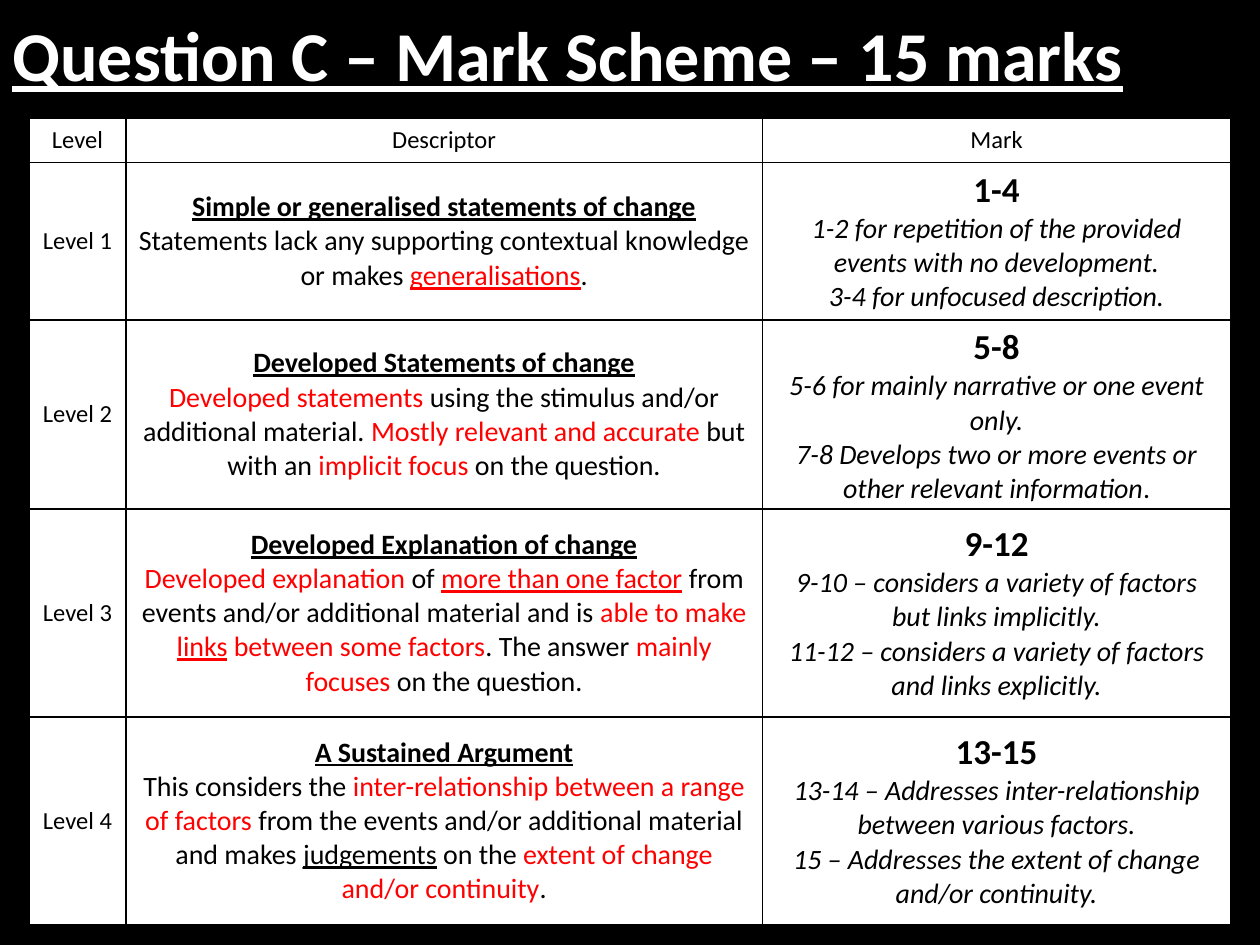
from lxml import etree
from pptx import Presentation, util as u
from pptx.dml.color import RGBColor
from pptx.enum import text
from pptx.oxml import ns

BLACK, WHITE, RED = "000000", "FFFFFF", "FF0000"
HEADINGS = ["Level", "Descriptor", "Mark"]
COLUMN_WIDTHS = [0.77, 5.05, 3.72]
ROW_HEIGHTS = [0.35, 1.25, 1.48, 1.65, 1.65]

LEVELS = [
    ("Simple or generalised statements of change",
     [("Statements lack any supporting contextual knowledge or makes ", ""),
      ("generalisations", "ru"), (".", "")],
     "1-4",
     [[("1-2 for repetition of the provided events with no development.", "i")],
      [("3-4 for unfocused description.", "i")]]),
    ("Developed Statements of change",
     [("Developed statements ", "r"),
      ("using the stimulus and/or additional material. ", ""),
      ("Mostly relevant and accurate ", "r"), ("but with an ", ""),
      ("implicit focus ", "r"), ("on the question.", "")],
     "5-8",
     [[("5-6 for mainly narrative or one event only.", "i")],
      [("7-8 Develops two or more events or other relevant information", "i"), (".", "")]]),
    ("Developed Explanation of change",
     [("Developed explanation ", "r"), ("of ", ""), ("more than one factor", "ru"),
      (" from events and/or additional material and is ", ""),
      ("able to make ", "r"), ("links", "ru"), (" between some factors", "r"),
      (". The answer ", ""), ("mainly focuses", "r"), (" on the question.", "")],
     "9-12",
     [[("9-10 – considers a variety of factors but links implicitly.", "i")],
      [("11-12 – considers a variety of factors and links explicitly.", "i")]]),
    ("A Sustained Argument",
     [("This considers the ", ""),
      ("inter-relationship between a range of factors ", "r"),
      ("from the events and/or additional material and makes ", ""),
      ("judgements", "u"), (" on the ", ""),
      ("extent of change and/or continuity", "r"), (".", "")],
     "13-15",
     [[("13-14 – Addresses inter-relationship between various factors.", "i")],
      [("15 – Addresses the extent of change and/or continuity.", "i")]]),
]


def colour(hex_value):
    return RGBColor.from_string(hex_value)


class MarkSchemeSlide:
    font_name = "Calibri"

    def __init__(self, deck):
        self.slide = deck.slides.add_slide(deck.slide_layouts[6])
        background = self.slide.background.fill
        background.solid()
        background.fore_color.rgb = colour(BLACK)

    def run(self, paragraph, wording, size, marks="", ink=BLACK):
        run = paragraph.add_run()
        run.text = wording
        font = run.font
        font.name, font.size = self.font_name, u.Pt(size)
        font.bold, font.italic, font.underline = (mark in marks for mark in "biu")
        font.color.rgb = colour(RED if "r" in marks else ink)

    def title(self, wording):
        title = self.slide.shapes.add_textbox(0, 0, u.Inches(10), u.Inches(0.94))
        frame = title.text_frame
        frame.word_wrap = True
        frame.vertical_anchor = text.MSO_ANCHOR.MIDDLE
        frame.paragraphs[0].line_spacing = 0.9
        self.run(frame.paragraphs[0], wording, 40, "bu", WHITE)

    def borders(self, cell):
        properties = cell._tc.get_or_add_tcPr()
        for position, side in enumerate(("lnL", "lnR", "lnT", "lnB")):
            line = etree.Element(ns.qn(f"a:{side}"), w=str(u.Pt(1)))
            fill = etree.SubElement(line, ns.qn("a:solidFill"))
            etree.SubElement(fill, ns.qn("a:srgbClr"), val=BLACK)
            properties.insert(position, line)

    def cell(self, cell, paragraphs):
        cell.fill.solid()
        cell.fill.fore_color.rgb = colour(WHITE)
        cell.vertical_anchor = text.MSO_ANCHOR.MIDDLE
        self.borders(cell)
        frame = cell.text_frame
        for index, (size, runs) in enumerate(paragraphs):
            paragraph = frame.add_paragraph() if index else frame.paragraphs[0]
            paragraph.alignment = text.PP_ALIGN.CENTER
            for wording, marks in runs:
                self.run(paragraph, wording, size, marks)

    def table(self, left, top, widths, heights, rows):
        table = self.slide.shapes.add_table(
            len(heights), len(widths), u.Inches(left), u.Inches(top),
            u.Inches(sum(widths)), u.Inches(sum(heights))).table
        for column, width in zip(table.columns, widths):
            column.width = u.Inches(width)
        for row, height, contents in zip(table.rows, heights, rows):
            row.height = u.Inches(height)
            for cell, paragraphs in zip(row.cells, contents):
                self.cell(cell, paragraphs)


def main():
    deck = Presentation()
    deck.slide_width, deck.slide_height = u.Inches(10), u.Inches(7.5)
    slide = MarkSchemeSlide(deck)
    slide.title("Question C – Mark Scheme – 15 marks")
    rows = [[[(14, [(heading, "")])] for heading in HEADINGS]]
    for number, (name, descriptor, marks, guidance) in enumerate(LEVELS, 1):
        rows.append([
            [(14, [(f"Level {number}", "")])],
            [(16, [(name, "bu")]), (16, descriptor)],
            [(20, [(marks, "b")])] + [(16, runs) for runs in guidance],
        ])
    slide.table(0.23, 0.94, COLUMN_WIDTHS, ROW_HEIGHTS, rows)
    deck.save("out.pptx")


if __name__ == "__main__":
    main()
